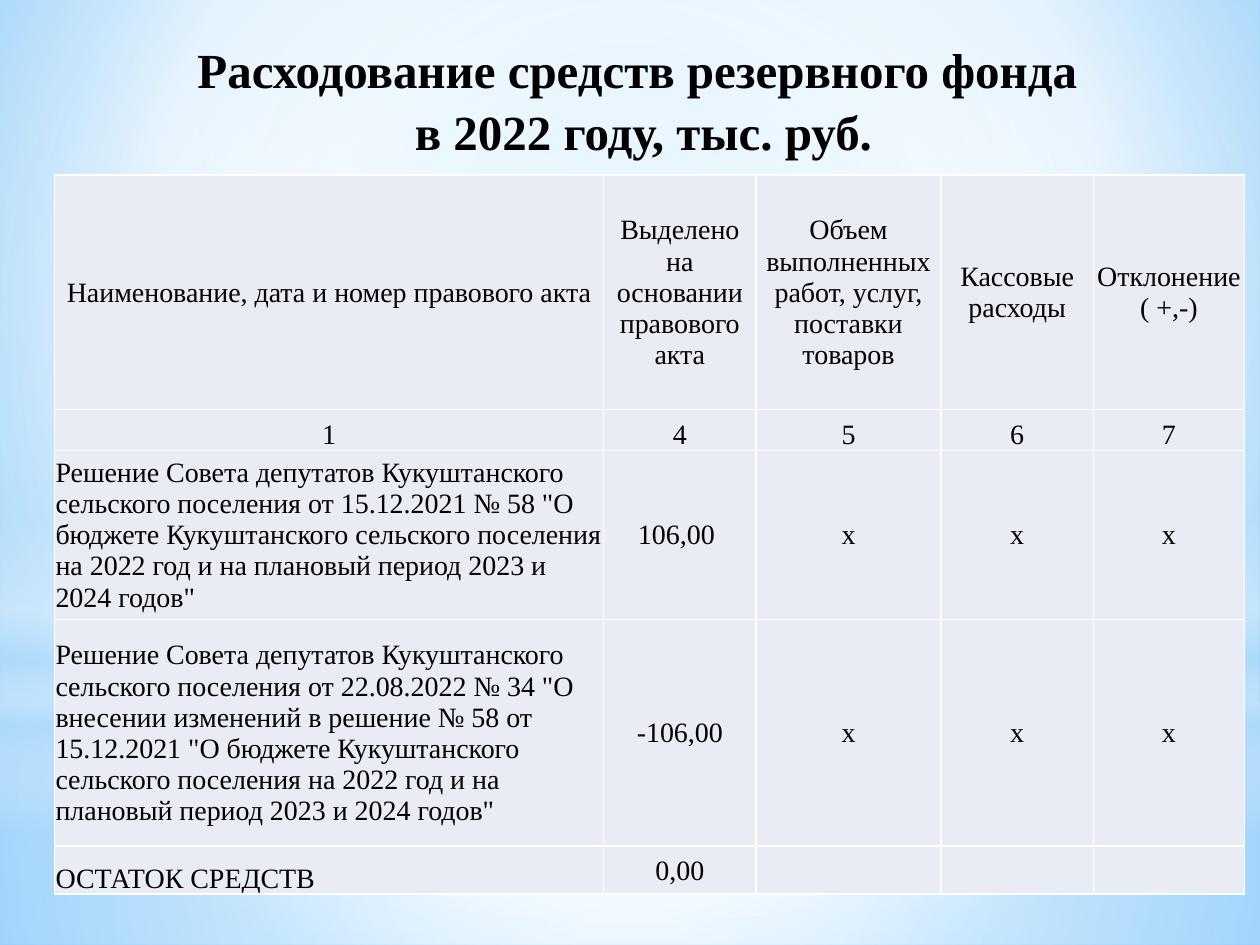
import pptx
import pptx.util
import pptx.dml.color
import pptx.enum.shapes
import pptx.enum.text
import pptx.oxml
import pptx.oxml.ns

Cm, Pt = pptx.util.Cm, pptx.util.Pt
RGB = pptx.dml.color.RGBColor
ALIGN = pptx.enum.text.PP_ALIGN
ANCHOR = pptx.enum.text.MSO_ANCHOR
KIND = pptx.enum.shapes.MSO_SHAPE
NS = pptx.oxml.ns.nsdecls("a")
FONT = "Times New Roman"

BLACK = RGB(0, 0, 0)
WHITE = RGB(255, 255, 255)
SKY = RGB(0x9E, 0xD5, 0xFF)
BLUE = RGB(0x5B, 0xB9, 0xFF)
PALE = RGB(0xB4, 0xDC, 0xFA)
LILAC = RGB(0xE9, 0xEB, 0xF5)


def blend(fill, root, stops, rect=None):
    """Gradient of (place, colour, opacity) stops: round if rect is given, else downward."""
    fill.gradient()
    grad = root.find(".//" + pptx.oxml.ns.qn("a:gradFill"))
    marks = "".join(
        f'<a:gs pos="{at * 1000}"><a:srgbClr val="{tint}">'
        f'<a:alpha val="{alpha * 1000}"/></a:srgbClr></a:gs>'
        for at, tint, alpha in stops)
    if rect:
        sides = " ".join(f'{side}="{part * 1000}"' for side, part in zip("ltrb", rect))
        way = f'<a:path path="circle"><a:fillToRect {sides}/></a:path>'
    else:
        way = '<a:lin ang="5400000" scaled="0"/>'
    new = pptx.oxml.parse_xml(
        f'<a:gradFill {NS} rotWithShape="1"><a:gsLst>{marks}</a:gsLst>{way}</a:gradFill>')
    grad.getparent().replace(grad, new)


def style(para, size, bold=False, align=ALIGN.CENTER):
    para.alignment = align
    para.font.name = FONT
    para.font.size = Pt(size)
    para.font.bold = bold
    para.font.color.rgb = BLACK


deck = pptx.Presentation()
deck.slide_width, deck.slide_height = Cm(25.4), Cm(19.05)
slide = deck.slides.add_slide(deck.slide_layouts[6])

# Background with soft light layers
blend(slide.background.fill, slide.element,
      [(0, SKY, 100), (60, WHITE, 100), (100, BLUE, 100)], (20, 10, 20, 60))
MID = (50, 50, 50, 50)
layers = [
    (KIND.RECTANGLE, 14.17, 4.88, MID,
     [(0, WHITE, 91), (37, WHITE, 76), (100, PALE, 79)]),
    (KIND.RECTANGLE, 0, 14.17, MID,
     [(0, WHITE, 89), (48, WHITE, 62), (100, PALE, 79)]),
    (KIND.RECTANGLE, 10.46, 6.35, None,
     [(0, WHITE, 0), (29, WHITE, 30), (45, PALE, 40),
      (55, WHITE, 26), (65, PALE, 60), (100, WHITE, 0)]),
    (KIND.OVAL, 4.45, 14.17, MID, [(0, WHITE, 100), (56, WHITE, 0)]),
]
for kind, top, height, rect, stops in layers:
    layer = slide.shapes.add_shape(kind, 0, Cm(top), deck.slide_width, Cm(height))
    layer.shadow.inherit = False
    layer.line.fill.background()
    blend(layer.fill, layer.element.spPr, stops, rect)

# Title
title = slide.shapes.add_textbox(Cm(1.5), Cm(0.61), Cm(22.94), Cm(1.5))
title.text_frame.word_wrap = True
para = title.text_frame.paragraphs[0]
para.text = "Расходование средств резервного фонда \vв 2022 году, тыс. руб."
para.line_spacing = 1.05
style(para, 28, bold=True)

# Table
rows = [
    ["Наименование, дата и номер правового акта",
     "Выделено на основании правового акта",
     "Объем выполненных работ, услуг, поставки товаров",
     "Кассовые расходы", "Отклонение ( +,-)"],
    ["1", "4", "5", "6", "7"],
    ["Решение Совета депутатов Кукуштанского сельского поселения от 15.12.2021 № 58 "
     "\"О бюджете Кукуштанского сельского поселения на 2022 год и на плановый период "
     "2023 и 2024 годов\"", "106,00 ", "х", "х", "х"],
    ["Решение Совета депутатов Кукуштанского сельского поселения от 22.08.2022 № 34 "
     "\"О внесении изменений в решение № 58 от 15.12.2021 \"О бюджете Кукуштанского "
     "сельского поселения на 2022 год и на плановый период 2023 и 2024 годов\"",
     "-106,00", "х", "х", "х"],
    ["ОСТАТОК СРЕДСТВ", "0,00", "", "", ""],
]
widths = [11.07, 3.07, 3.73, 3.07, 3.05]
heights = [4.72, 0.83, 3.3, 4.57, 0.97]
table = slide.shapes.add_table(len(rows), len(widths), Cm(1.1), Cm(3.53),
                               Cm(sum(widths)), Cm(sum(heights))).table
for col, width in zip(table.columns, widths):
    col.width = Cm(width)
for row, height in zip(table.rows, heights):
    row.height = Cm(height)

for r, words in enumerate(rows):
    for c, text in enumerate(words):
        cell = table.cell(r, c)
        cell.text = text
        cell.margin_left = cell.margin_right = cell.margin_top = Cm(0.02)
        cell.margin_bottom = 0
        low = r == 1 or (r == 4 and c == 0)
        cell.vertical_anchor = ANCHOR.BOTTOM if low else ANCHOR.MIDDLE
        left = c == 0 and r > 1
        style(cell.text_frame.paragraphs[0], 16,
              align=ALIGN.LEFT if left else ALIGN.CENTER)
        cell.fill.solid()
        cell.fill.fore_color.rgb = LILAC
        # Borders go ahead of the fill
        props = cell._tc.get_or_add_tcPr()
        for i, side in enumerate("LRTB"):
            props.insert(i, pptx.oxml.parse_xml(
                f'<a:ln{side} {NS} w="12700"><a:solidFill><a:srgbClr val="{WHITE}"/>'
                f'</a:solidFill></a:ln{side}>'))

deck.save("out.pptx")
